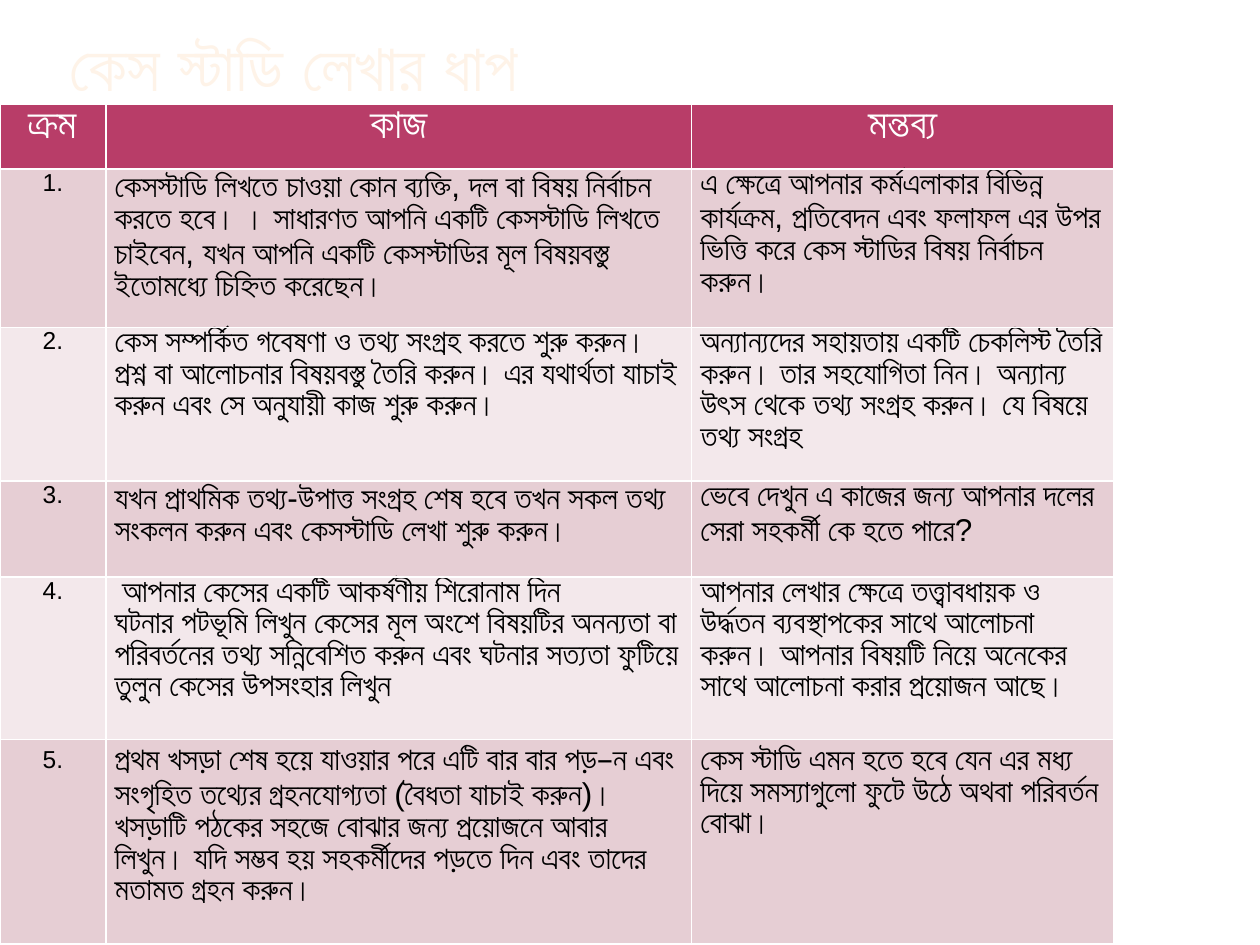
import pptx
import pptx.dml.color
import pptx.enum.text
import pptx.util

Inches = pptx.util.Inches
RGBColor = pptx.dml.color.RGBColor
ALIGN = pptx.enum.text.PP_ALIGN
ANCHOR = pptx.enum.text.MSO_ANCHOR

CREAM = RGBColor(0xFE, 0xF3, 0xE8)
WHITE = RGBColor(0xFF, 0xFF, 0xFF)
BLACK = RGBColor(0x00, 0x00, 0x00)
RASPBERRY = RGBColor(0xB8, 0x3D, 0x68)
ROW_FILLS = (RGBColor(0xE6, 0xCE, 0xD4), RGBColor(0xF3, 0xE8, 0xEB))

TITLE = "কেস স্টাডি লেখার ধাপ"
HEADERS = ("ক্রম", "কাজ", "মন্তব্য")
STEPS = (
    ("কেসস্টাডি লিখতে চাওয়া কোন ব্যক্তি, দল বা বিষয় নির্বাচন করতে হবে। । সাধারণত আপনি একটি কেসস্টাডি লিখতে চাইবেন, যখন আপনি একটি কেসস্টাডির মূল বিষয়বস্তু ইতোমধ্যে চিহ্নিত করেছেন।",
     "এ ক্ষেত্রে আপনার কর্মএলাকার বিভিন্ন কার্যক্রম, প্রতিবেদন এবং ফলাফল এর উপর ভিত্তি করে কেস স্টাডির বিষয় নির্বাচন করুন।"),
    ("কেস সম্পর্কিত গবেষণা ও তথ্য সংগ্রহ করতে শুরু করুন। প্রশ্ন বা আলোচনার বিষয়বস্তু তৈরি করুন। এর যথার্থতা যাচাই করুন এবং সে অনুযায়ী কাজ শুরু করুন।",
     "অন্যান্যদের সহায়তায় একটি চেকলিস্ট তৈরি করুন। তার সহযোগিতা নিন। অন্যান্য উৎস থেকে তথ্য সংগ্রহ করুন। যে বিষয়ে তথ্য সংগ্রহ"),
    ("যখন প্রাথমিক তথ্য-উপাত্ত সংগ্রহ শেষ হবে তখন সকল তথ্য সংকলন করুন এবং কেসস্টাডি লেখা শুরু করুন।",
     "ভেবে দেখুন এ কাজের জন্য আপনার দলের সেরা সহকর্মী কে হতে পারে?"),
    ("আপনার কেসের একটি আকর্ষণীয় শিরোনাম দিন\nঘটনার পটভূমি লিখুন কেসের মূল অংশে বিষয়টির অনন্যতা বা পরিবর্তনের তথ্য সন্নিবেশিত করুন এবং ঘটনার সত্যতা ফুটিয়ে তুলুন কেসের উপসংহার লিখুন",
     "আপনার লেখার ক্ষেত্রে তত্ত্বাবধায়ক ও উর্দ্ধতন ব্যবস্থাপকের সাথে আলোচনা করুন। আপনার বিষয়টি নিয়ে অনেকের সাথে আলোচনা করার প্রয়োজন আছে।"),
    ("প্রথম খসড়া শেষ হয়ে যাওয়ার পরে এটি বার বার পড়–ন এবং সংগৃহিত তথ্যের গ্রহনযোগ্যতা (বৈধতা যাচাই করুন)। খসড়াটি পঠকের সহজে বোঝার জন্য প্রয়োজনে আবার লিখুন। যদি সম্ভব হয় সহকর্মীদের পড়তে দিন এবং তাদের মতামত গ্রহন করুন।",
     "কেস স্টাডি এমন হতে হবে যেন এর মধ্য দিয়ে সমস্যাগুলো ফুটে উঠে অথবা পরিবর্তন বোঝা।"),
)
COL_WIDTHS = (0.84, 4.65, 3.35)
ROW_HEIGHTS = (0.51, 1.26, 1.22, 0.76, 1.29, 1.62)


def set_text(tf, text, size=18, font="Arial", color=BLACK, bold=False, align=ALIGN.LEFT):
    """Fill the first paragraph; a newline becomes a line break."""
    p = tf.paragraphs[0]
    p.alignment = align
    for i, line in enumerate(text.split("\n")):
        if i:
            p.add_line_break()
        r = p.add_run()
        r.text = line
        r.font.size = pptx.util.Pt(size)
        r.font.name = font
        r.font.bold = bold
        r.font.color.rgb = color
    return p


def set_cell(cell, text, fill, margin_y=0, **fmt):
    cell.fill.solid()
    cell.fill.fore_color.rgb = fill
    cell.margin_left = cell.margin_right = Inches(0.07)
    cell.margin_top = cell.margin_bottom = Inches(margin_y)
    return set_text(cell.text_frame, text, **fmt)


def add_title(s):
    sp = s.shapes.title
    sp.left, sp.top, sp.width, sp.height = map(Inches, (0.5, 0, 7.92, 0.83))
    tf = sp.text_frame
    tf.auto_size = pptx.enum.text.MSO_AUTO_SIZE.NONE
    tf.vertical_anchor = ANCHOR.BOTTOM
    tf.margin_left = tf.margin_right = Inches(0.05)
    tf.margin_top = tf.margin_bottom = 0
    set_text(tf, TITLE, size=38, font="Karla", color=CREAM, bold=True)


def add_steps_table(s):
    table = s.shapes.add_table(
        len(ROW_HEIGHTS), len(COL_WIDTHS), 0, Inches(0.83),
        Inches(sum(COL_WIDTHS)), Inches(sum(ROW_HEIGHTS))).table
    for column, width in zip(table.columns, COL_WIDTHS):
        column.width = Inches(width)
    for row, height in zip(table.rows, ROW_HEIGHTS):
        row.height = Inches(height)

    for col, header in enumerate(HEADERS):
        set_cell(table.cell(0, col), header, RASPBERRY,
                 size=24, color=WHITE, align=ALIGN.CENTER)
    for row, (task, comment) in enumerate(STEPS, 1):
        fill = ROW_FILLS[(row - 1) % 2]
        margin_y = 0.05 if row == len(STEPS) else 0
        set_cell(table.cell(row, 0), f"{row}.", fill, margin_y,
                 size=14, align=ALIGN.CENTER)
        p = set_cell(table.cell(row, 1), task, fill, margin_y)
        if "\n" in task:
            p._p.get_or_add_pPr().set("indent", str(Inches(0.06)))
        set_cell(table.cell(row, 2), comment, fill, margin_y)


def main():
    prs = pptx.Presentation()
    prs.slide_width, prs.slide_height = Inches(10), Inches(7.5)
    s = prs.slides.add_slide(prs.slide_layouts[5])
    add_title(s)
    add_steps_table(s)
    prs.save("out.pptx")


if __name__ == "__main__":
    main()
